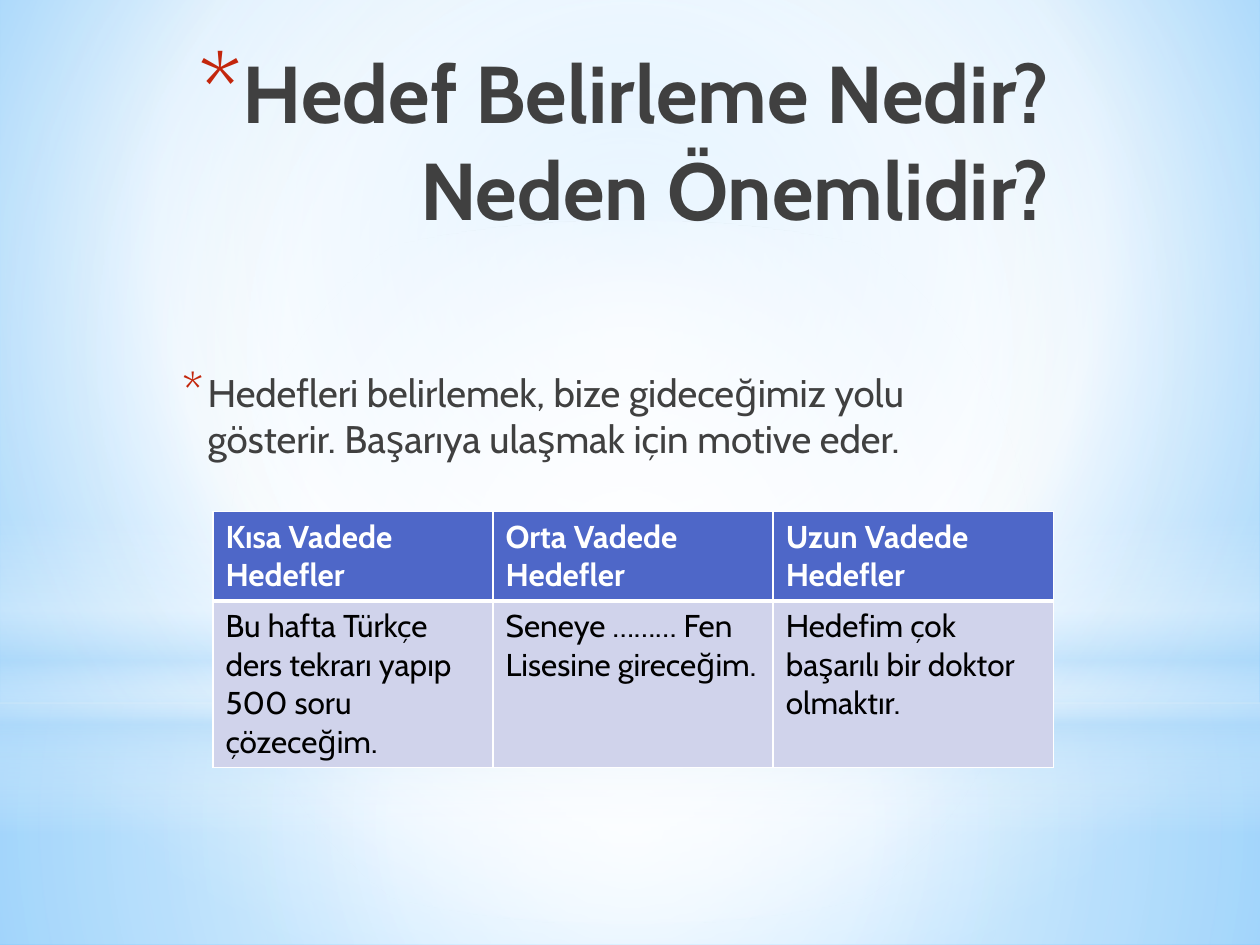
from lxml import etree
from pptx import Presentation
from pptx import util as u
from pptx.dml.color import RGBColor
from pptx.enum import shapes, text
from pptx.oxml.ns import qn

WIDTH, HEIGHT = 10, 7.5
FONT = "Cabin"
WHITE, BLACK, GREY, RED = "FFFFFF", "000000", "404040", "C3260C"
BLUE, LAVENDER, SKY = "4E67C8", "D0D3EB", "B4DCFA"
CENTRE = (50, 50, 50, 50)

HEADINGS = ["Kısa Vadede Hedefler", "Orta Vadede Hedefler", "Uzun Vadede Hedefler"]
GOALS = [
    "Bu hafta Türkçe ders tekrarı yapıp 500 soru çözeceğim.",
    "Seneye ……… Fen Lisesine gireceğim.",
    "Hedefim çok başarılı bir doktor olmaktır.",
]


def colour(value):
    return RGBColor.from_string(value)


def child(parent, tag, **attributes):
    return etree.SubElement(parent, qn(tag), {k: str(v) for k, v in attributes.items()})


def set_gradient(fill, owner, stops, focus=None):
    """Stops are (position, colour, opacity) in percent; without a focus it runs downwards."""
    fill.gradient()
    gradient = next(owner.iter(qn("a:gradFill")))
    for old in list(gradient):
        gradient.remove(old)
    stop_list = child(gradient, "a:gsLst")
    for position, value, opacity in stops:
        stop = child(stop_list, "a:gs", pos=position * 1000)
        tint = child(stop, "a:srgbClr", val=value)
        if opacity < 100:
            child(tint, "a:alpha", val=opacity * 1000)
    if focus:
        circle = child(gradient, "a:path", path="circle")
        child(circle, "a:fillToRect", **{side: share * 1000 for side, share in zip("ltrb", focus)})
    else:
        child(gradient, "a:lin", ang=90 * 60000, scaled=0)


def add_glow(slide, kind, top, height, stops, focus=None):
    """Full-width backdrop shape with a gradient."""
    glow = slide.shapes.add_shape(kind, 0, u.Inches(top), u.Inches(WIDTH), u.Inches(height))
    glow.shadow.inherit = False
    glow.line.fill.background()
    set_gradient(glow.fill, glow._element.spPr, stops, focus)


def add_backdrop(slide):
    set_gradient(slide.background.fill, slide._element,
                 [(0, "9ED5FF", 100), (60, WHITE, 100), (100, "5BB9FF", 100)], (20, 10, 20, 60))
    kinds, horizon = shapes.MSO_SHAPE, 5.58
    add_glow(slide, kinds.RECTANGLE, horizon, HEIGHT - horizon,
             [(0, WHITE, 91), (37, WHITE, 76), (100, SKY, 79)], CENTRE)
    add_glow(slide, kinds.RECTANGLE, 0, horizon,
             [(0, WHITE, 89), (48, WHITE, 62), (100, SKY, 79)], CENTRE)
    add_glow(slide, kinds.RECTANGLE, 4.12, 2.5,
             [(0, WHITE, 0), (29, WHITE, 30), (45, SKY, 40),
              (55, WHITE, 26), (65, SKY, 60), (100, WHITE, 0)])
    add_glow(slide, kinds.OVAL, 1.75, horizon, [(0, WHITE, 100), (56, WHITE, 0)], CENTRE)


def add_span(para, words, size, value, bold=False):
    span = para.add_run()
    span.text = words
    span.font.name, span.font.size, span.font.bold = FONT, u.Pt(size), bold
    span.font.color.rgb = colour(value)


def set_star(para, margin, hang, percent):
    """Red asterisk bullet, its size in percent of the text."""
    props = para._p.get_or_add_pPr()
    props.set("marL", str(u.Inches(margin)))
    props.set("indent", str(-u.Inches(hang)))
    child(child(props, "a:buClr"), "a:srgbClr", val=RED)
    child(props, "a:buSzPct", val=percent * 1000)
    child(props, "a:buFont", typeface=FONT)
    child(props, "a:buChar", char="*")


def prepare_frame(box):
    frame = box.text_frame
    frame.word_wrap = True
    frame.auto_size = text.MSO_AUTO_SIZE.NONE
    frame.vertical_anchor = text.MSO_ANCHOR.TOP
    return frame.paragraphs[0]


def add_title(slide):
    title = slide.shapes.title
    title.left, title.top = u.Inches(1.3), u.Inches(0.29)
    title.width, title.height = u.Inches(7.12), u.Inches(1.25)
    slide.shapes._spTree.append(title._element)  # in front of the backdrop
    para = prepare_frame(title)
    para.alignment = text.PP_ALIGN.RIGHT
    set_star(para, 0.35, 0.35, 128)
    add_span(para, "Hedef Belirleme Nedir? Neden Önemlidir?", 46, GREY, bold=True)


def add_body(slide):
    box = slide.shapes.add_textbox(u.Inches(1.3), u.Inches(2.88), u.Inches(7), u.Inches(3.8))
    para = prepare_frame(box)
    para.space_before, para.space_after = u.Pt(4.4), u.Pt(3)
    set_star(para, 0.25, 0.2, 130)
    add_span(para, "Hedefleri belirlemek, bize gideceğimiz yolu gösterir. "
                   "Başarıya ulaşmak için motive eder.", 22, GREY)


def set_borders(cell, top, bottom):
    props = cell._tc.get_or_add_tcPr()
    for side, points in (("L", 1), ("R", 1), ("T", top), ("B", bottom)):
        line = child(props, f"a:ln{side}", w=u.Pt(points))
        child(child(line, "a:solidFill"), "a:srgbClr", val=WHITE)


def add_goal_table(slide):
    row_heights = (0.7, 1.32)
    frame = slide.shapes.add_table(2, len(HEADINGS), u.Inches(1.69), u.Inches(4.06),
                                   u.Inches(6.67), u.Inches(sum(row_heights)))
    rows = [(HEADINGS, BLUE, WHITE, True, 1, 3), (GOALS, LAVENDER, BLACK, False, 3, 1)]
    for row, height, (entries, fill, ink, bold, top, bottom) in zip(
            frame.table.rows, row_heights, rows):
        row.height = u.Inches(height)
        for cell, words in zip(row.cells, entries):
            set_borders(cell, top, bottom)
            cell.fill.solid()
            cell.fill.fore_color.rgb = colour(fill)
            add_span(cell.text_frame.paragraphs[0], words, 18, ink, bold)


def main():
    deck = Presentation()
    deck.slide_width, deck.slide_height = u.Inches(WIDTH), u.Inches(HEIGHT)
    page = deck.slides.add_slide(deck.slide_layouts[5])
    add_backdrop(page)
    add_title(page)
    add_body(page)
    add_goal_table(page)
    deck.save("out.pptx")


if __name__ == "__main__":
    main()
